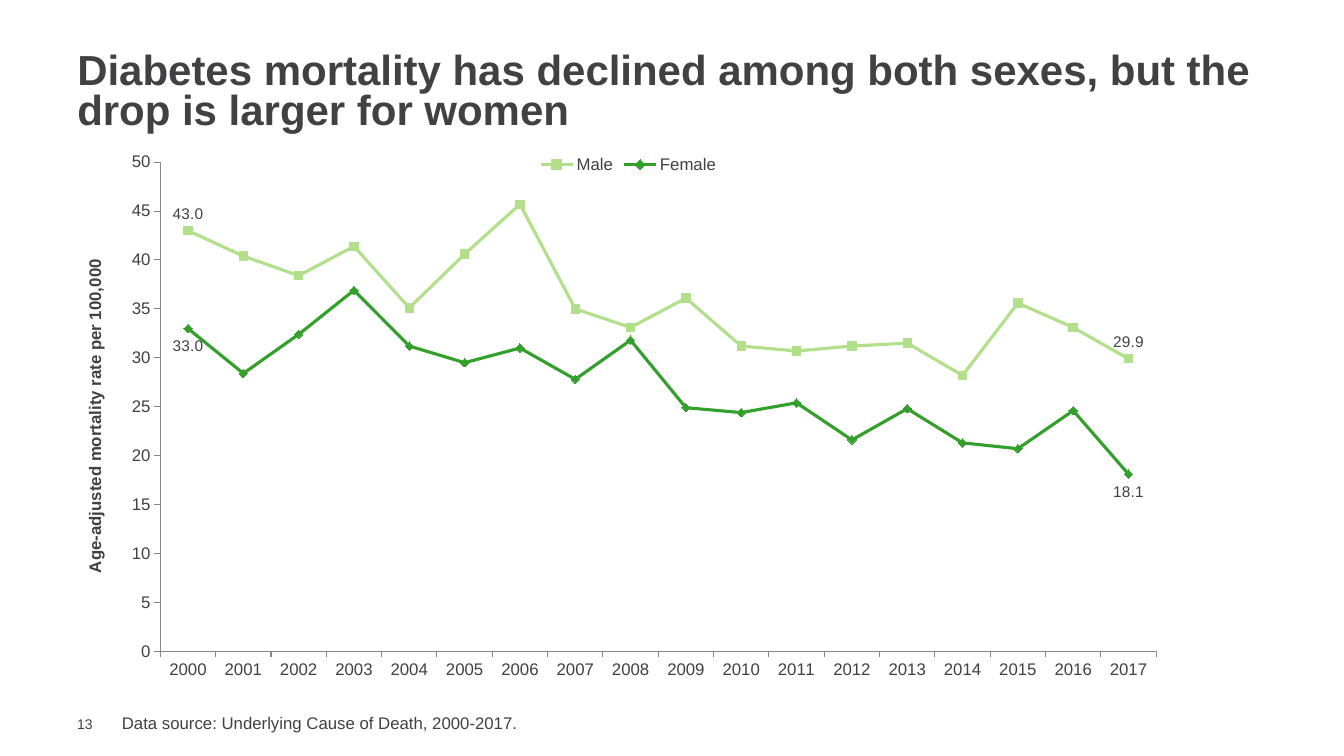
from lxml import etree
from pptx import Presentation
from pptx.chart.data import CategoryChartData
from pptx.dml.color import RGBColor
from pptx.enum.chart import (XL_CHART_TYPE, XL_LABEL_POSITION, XL_LEGEND_POSITION,
                             XL_MARKER_STYLE, XL_TICK_MARK)
from pptx.enum.text import MSO_ANCHOR, MSO_AUTO_SIZE, PP_ALIGN
from pptx.oxml.ns import qn
from pptx.util import Pt

LINE_MARKERS = XL_CHART_TYPE.LINE_MARKERS
ABOVE, BELOW = XL_LABEL_POSITION.ABOVE, XL_LABEL_POSITION.BELOW
SQUARE, DIAMOND = XL_MARKER_STYLE.SQUARE, XL_MARKER_STYLE.DIAMOND
TOP = XL_LEGEND_POSITION.TOP
OUTSIDE = XL_TICK_MARK.OUTSIDE
MIDDLE, ANCHOR_TOP = MSO_ANCHOR.MIDDLE, MSO_ANCHOR.TOP
NO_AUTOFIT = MSO_AUTO_SIZE.NONE
LEFT = PP_ALIGN.LEFT

FONT, TEXT, AXIS = "Arial", "414042", "868686"
YEARS = [str(year) for year in range(2000, 2018)]
# name, colour, marker, label position, yearly rates
SERIES = [
    ("Male", "B2DF8A", SQUARE, ABOVE,
     [43, 40.4, 38.4, 41.4, 35.1, 40.6, 45.7, 35, 33.1, 36.1, 31.2, 30.7, 31.2,
      31.5, 28.2, 35.6, 33.1, 29.9]),
    ("Female", "33A02C", DIAMOND, BELOW,
     [33, 28.4, 32.4, 36.9, 31.2, 29.5, 31, 27.8, 31.8, 24.9, 24.4, 25.4, 21.6,
      24.8, 21.3, 20.7, 24.6, 18.1]),
]
PLOT_BOX = {"x": 0.083, "y": 0.032, "w": 0.887, "h": 0.868}


def rgb(color):
    return RGBColor.from_string(color)


def set_font(font, size, bold=False):
    font.name, font.size, font.bold = FONT, Pt(size), bold
    font.color.rgb = rgb(TEXT)


def add_title(s, box, text):
    title = s.shapes.title
    title.left, title.top, title.width, title.height = map(Pt, box)
    tf = title.text_frame
    tf.text = text
    tf.word_wrap, tf.auto_size, tf.vertical_anchor = True, NO_AUTOFIT, MIDDLE
    p = tf.paragraphs[0]
    p.alignment, p.line_spacing = LEFT, 0.8
    set_font(p.font, 30, True)


def add_text(s, box, text, size, anchor=ANCHOR_TOP, inset=3.6):
    tf = s.shapes.add_textbox(*map(Pt, box)).text_frame
    tf.word_wrap, tf.vertical_anchor = True, anchor
    tf.margin_top = tf.margin_bottom = Pt(inset)
    p = tf.paragraphs[0]
    p.text = text
    set_font(p.font, size)


def set_plot_box(chart):
    plot_area = chart._chartSpace.chart.plotArea
    for old in plot_area.findall(qn("c:layout")):
        plot_area.remove(old)
    layout = etree.Element(qn("c:layout"))
    manual = etree.SubElement(layout, qn("c:manualLayout"))
    settings = [("layoutTarget", "inner"), ("xMode", "edge"), ("yMode", "edge")]
    for tag, value in settings + list(PLOT_BOX.items()):
        etree.SubElement(manual, qn(f"c:{tag}")).set("val", str(value))
    plot_area.insert(0, layout)


def format_axes(chart):
    for axis in (chart.category_axis, chart.value_axis):
        axis.has_major_gridlines = False
        axis.major_tick_mark = OUTSIDE
        axis.format.line.color.rgb = rgb(AXIS)
        axis.format.line.width = Pt(0.75)
        set_font(axis.tick_labels.font, 12)
    rates = chart.value_axis
    rates.minimum_scale, rates.maximum_scale, rates.major_unit = 0, 50, 5
    rates.tick_labels.number_format = "0"
    rates.tick_labels.number_format_is_linked = False
    tf = rates.axis_title.text_frame
    tf.text = "Age-adjusted mortality rate per 100,000"
    tf._txBody.bodyPr.set("rot", "-5400000")
    tf._txBody.bodyPr.set("vert", "horz")
    set_font(tf.paragraphs[0].font, 12, True)


def format_series(series, color, marker, position):
    series.smooth = False
    series.format.line.color.rgb = rgb(color)
    series.format.line.width = Pt(2.25)
    series.marker.style, series.marker.size = marker, 6
    series.marker.format.fill.solid()
    series.marker.format.fill.fore_color.rgb = rgb(color)
    series.marker.format.line.color.rgb = rgb(color)
    # Only the first and last years carry a label
    series.data_labels.show_value = False
    for index in (0, len(YEARS) - 1):
        label = series.points[index].data_label
        set_font(label.font, 11)
        label.position = position


def add_rate_chart(s, box):
    data = CategoryChartData(number_format="#,##0.0")
    data.categories = YEARS
    for name, *_, rates in SERIES:
        data.add_series(name, rates)
    chart = s.shapes.add_chart(LINE_MARKERS, *map(Pt, box), data).chart
    set_font(chart.font, 18)
    chart.has_title = False
    chart.plots[0].vary_by_categories = False
    chart.has_legend = True
    chart.legend.position = TOP
    chart.legend.include_in_layout = False
    set_font(chart.legend.font, 12)
    format_axes(chart)
    set_plot_box(chart)
    for series, (_, color, marker, position, _) in zip(chart.plots[0].series, SERIES):
        format_series(series, color, marker, position)


def add_footer(s, box):
    left, top, width, height = box
    add_text(s, (left, top + 5.7, 31, 12.3), "13", 10, MIDDLE, 0)
    add_text(s, (left + 32, top, width - 32, height),
             "Data source: Underlying Cause of Death, 2000-2017.", 12)


def main():
    prs = Presentation()
    prs.slide_width, prs.slide_height = Pt(960), Pt(540)
    s = prs.slides.add_slide(prs.slide_layouts[5])
    add_title(s, (48, 34, 864, 65.5),
              "Diabetes mortality has declined among both sexes, "
              "but the drop is larger for women")
    add_rate_chart(s, (48, 103, 802, 402.5))
    add_footer(s, (48, 505.5, 731, 21.6))
    prs.save("out.pptx")


if __name__ == "__main__":
    main()
